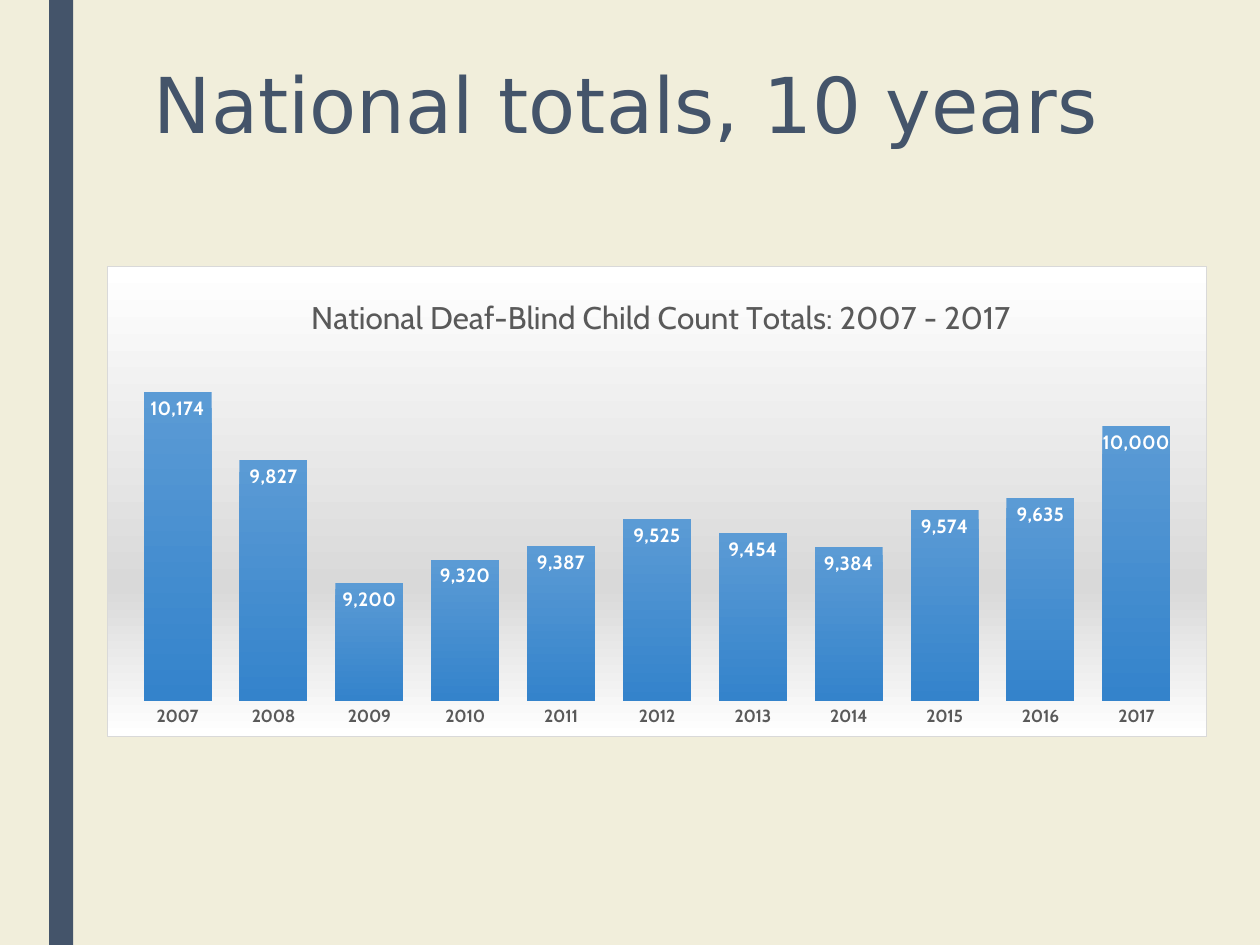
from lxml import etree
from pptx import Presentation
from pptx.chart.data import CategoryChartData
from pptx.dml.color import RGBColor
from pptx.enum.chart import XL_CHART_TYPE, XL_LABEL_POSITION, XL_TICK_MARK
from pptx.enum.shapes import MSO_SHAPE
from pptx.enum.text import MSO_ANCHOR, MSO_AUTO_SIZE, PP_ALIGN
from pptx.oxml import parse_xml
from pptx.oxml.ns import nsdecls, qn
from pptx.util import Inches, Pt

COLUMN = XL_CHART_TYPE.COLUMN_CLUSTERED
IN_END = XL_LABEL_POSITION.INSIDE_END
NO_TICK = XL_TICK_MARK.NONE
RECT = MSO_SHAPE.RECTANGLE
TOP = MSO_ANCHOR.TOP
NO_FIT = MSO_AUTO_SIZE.NONE
LEFT = PP_ALIGN.LEFT

CREAM = RGBColor(0xF1, 0xEE, 0xDB)
SLATE = RGBColor(0x44, 0x54, 0x6A)
GRAY = RGBColor(0x59, 0x59, 0x59)
SILVER = RGBColor(0xD9, 0xD9, 0xD9)
WHITE = RGBColor(0xFF, 0xFF, 0xFF)
BLACK = RGBColor(0, 0, 0)
SKY = RGBColor(0x5B, 0x9B, 0xD5)
BLUE = RGBColor(0x34, 0x83, 0xCB)

HEAD_FONT = "DejaVu Sans"
BODY_FONT = "Cabin"
COUNTS = [10174, 9827, 9200, 9320, 9387, 9525, 9454, 9384, 9574, 9635, 10000]
YEARS = [str(2007 + i) for i in range(len(COUNTS))]


def style(font, size, color, name=BODY_FONT, bold=False):
    font.size, font.name, font.bold = Pt(size), name, bold
    font.color.rgb = color


def write(frame, text, space=None, **look):
    frame.text = text
    para = frame.paragraphs[0]
    para.alignment = LEFT
    para.line_spacing = space
    style(para.runs[0].font, **look)


def shade(stops):
    """Return a vertical gradient fill for (percent, colour) stops."""
    marks = "".join(
        f'<a:gs pos="{pos * 1000}"><a:srgbClr val="{color}"/></a:gs>'
        for pos, color in stops)
    return parse_xml(f'<a:gradFill {nsdecls("a")}><a:gsLst>{marks}</a:gsLst>'
                     '<a:lin ang="5400000" scaled="0"/></a:gradFill>')


def arrange(part, index, inner=False, **box):
    """Fix a chart part's place, in fractions of the chart."""
    for old in part.findall(qn("c:layout")):
        part.remove(old)
    layout = etree.Element(qn("c:layout"))
    manual = etree.SubElement(layout, qn("c:manualLayout"))
    if inner:
        etree.SubElement(manual, qn("c:layoutTarget"), val="inner")
    for key in ("x", "y"):
        etree.SubElement(manual, qn(f"c:{key}Mode"), val="edge")
    for key, value in box.items():
        etree.SubElement(manual, qn(f"c:{key}"), val=str(value))
    part.insert(index, layout)


def add_bar(slide, x, y, w, h):
    bar = slide.shapes.add_shape(RECT, x, y, w, h)
    bar.shadow.inherit = False
    bar.fill.solid()
    bar.fill.fore_color.rgb = SLATE
    bar.line.fill.background()


def add_head(slide, x, y, w, h):
    head = slide.shapes.title
    head.left, head.top, head.width, head.height = x, y, w, h
    frame = head.text_frame
    frame.vertical_anchor, frame.auto_size = TOP, NO_FIT
    write(frame, "National totals, 10 years", space=0.89,
          size=44, color=SLATE, name=HEAD_FONT)


def fill_chart(chart):
    """Give the chart its background gradient and thin border."""
    space = chart.font and chart._chartSpace
    props = parse_xml(f'<c:spPr {nsdecls("c", "a")}/>')
    props.append(shade([(0, WHITE), (68, SILVER), (100, WHITE)]))
    props.append(parse_xml(
        f'<a:ln {nsdecls("a")} w="{Pt(0.75)}"><a:solidFill>'
        f'<a:srgbClr val="{SILVER}"/></a:solidFill></a:ln>'))
    space.find(qn("c:txPr")).addprevious(props)


def add_chart(slide, x, y, w, h):
    data = CategoryChartData(number_format="#,##0")
    data.categories = YEARS
    data.add_series("Series 1", COUNTS)
    chart = slide.shapes.add_chart(COLUMN, x, y, w, h, data).chart
    style(chart.font, 10, BLACK)
    fill_chart(chart)
    chart.has_legend = False

    title = chart.chart_title
    write(title.text_frame, "National Deaf-Blind Child Count Totals: 2007 - 2017",
          size=18, color=GRAY)
    title.include_in_layout = False
    arrange(title._element, 1, x=0.18, y=0.05)

    years = chart.category_axis
    years.major_tick_mark = years.minor_tick_mark = NO_TICK
    years.format.line.fill.background()
    style(years.tick_labels.font, 10, GRAY, bold=True)

    counts = chart.value_axis
    counts.minimum_scale, counts.maximum_scale = 8600, 10400
    counts.has_major_gridlines = False
    counts.visible = False

    plot = chart.plots[0]
    plot.gap_width = 41
    plot.vary_by_categories = False
    arrange(chart._chartSpace.chart.plotArea, 0, inner=True,
            x=0.02, y=0.174, w=0.96, h=0.75)

    series = plot.series[0]
    series.invert_if_negative = False
    series.format.fill.background()
    props = series._element.find(qn("c:spPr"))
    props.replace(props[0], shade([(0, SKY), (100, BLUE)]))
    labels = series.data_labels
    labels.show_value = True
    labels.position = IN_END
    labels.number_format, labels.number_format_is_linked = "#,##0", False
    style(labels.font, 11, WHITE, bold=True)


def main():
    deck = Presentation()
    deck.slide_width, deck.slide_height = Inches(10), Inches(7.5)
    slide = deck.slides.add_slide(deck.slide_layouts[5])
    slide.background.fill.solid()
    slide.background.fill.fore_color.rgb = CREAM
    add_bar(slide, Inches(0.39), 0, Inches(0.19), deck.slide_height)
    add_head(slide, Inches(1.12), Inches(0.49), Inches(7.88), Inches(1))
    add_chart(slide, Inches(0.85), Inches(2.11), Inches(8.73), Inches(3.74))
    deck.save("out.pptx")


if __name__ == "__main__":
    main()
